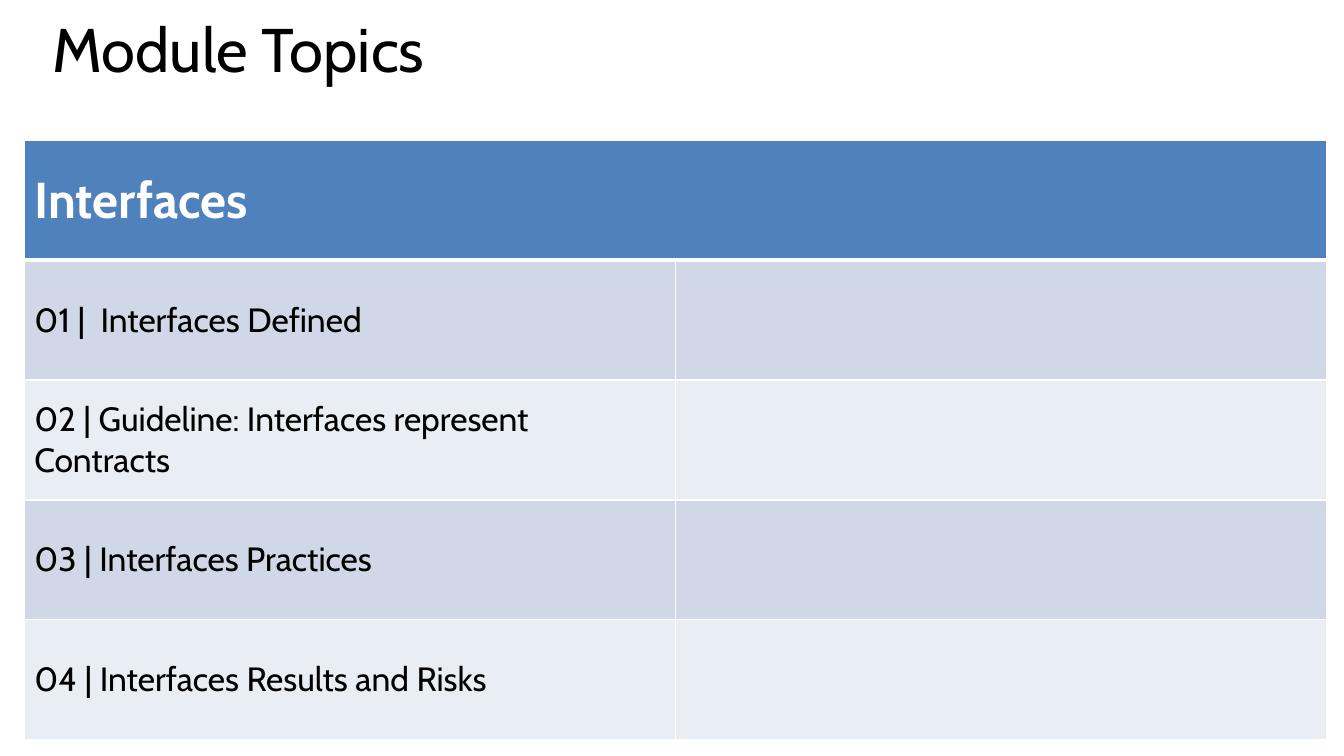
from lxml import etree
from pptx import Presentation
from pptx.dml.color import RGBColor
from pptx.enum import text
from pptx.oxml import ns
from pptx.util import Inches, Pt

TITLE = "Module Topics"
HEADING = "Interfaces"
TOPICS = [
    "01 |  Interfaces Defined",
    "02 | Guideline: Interfaces represent Contracts",
    "03 | Interfaces Practices",
    "04 | Interfaces Results and Risks",
]
FONT = "Cabin"
HEADER_FILL = "4F81BD"
BAND_FILLS = ["D0D8E8", "E9EDF4"]
COLUMNS = 2
ROW_HEIGHT = 1.19


def rgb(value):
    return RGBColor.from_string(value)


def write(tf, content, size, color="000000", bold=False, spacing=None):
    p = tf.paragraphs[0]
    p.alignment = text.PP_ALIGN.LEFT
    if spacing:
        p.line_spacing = spacing
    r = p.add_run()
    r.text = content
    r.font.name = FONT
    r.font.size = Pt(size)
    r.font.bold = bold
    r.font.color.rgb = rgb(color)


def set_borders(cell, color="FFFFFF", **widths):
    tcPr = cell._tc.get_or_add_tcPr()
    for i, side in enumerate("LRTB"):
        ln = etree.Element(ns.qn(f"a:ln{side}"), w=str(Pt(widths.get(side, 1))))
        fill = etree.SubElement(ln, ns.qn("a:solidFill"))
        etree.SubElement(fill, ns.qn("a:srgbClr"), val=color)
        tcPr.insert(i, ln)


def format_cell(cell, fill, **widths):
    cell.vertical_anchor = text.MSO_ANCHOR.MIDDLE
    cell.fill.solid()
    cell.fill.fore_color.rgb = rgb(fill)
    set_borders(cell, **widths)


def add_title(s):
    title = s.shapes.title
    title.left, title.top = Inches(0.42), Inches(0.2)
    title.width, title.height = Inches(12.6), Inches(1.16)
    tf = title.text_frame
    tf.word_wrap = True
    tf.vertical_anchor = text.MSO_ANCHOR.TOP
    write(tf, TITLE, 44, spacing=0.8)


def add_topics(s):
    rows = len(TOPICS) + 1
    table = s.shapes.add_table(
        rows, COLUMNS, Inches(0.24), Inches(1.39),
        Inches(12.92), Inches(ROW_HEIGHT * rows)).table
    for cell in table.rows[0].cells:
        format_cell(cell, HEADER_FILL, B=3)
    heading = table.cell(0, 0)
    heading.merge(table.cell(0, COLUMNS - 1))
    write(heading.text_frame, HEADING, 36, "FFFFFF", bold=True)
    for i, topic in enumerate(TOPICS):
        cells = table.rows[i + 1].cells
        for cell in cells:
            format_cell(cell, BAND_FILLS[i % 2], T=1 if i else 3)
        write(cells[0].text_frame, topic, 24)


def main():
    prs = Presentation()
    prs.slide_width, prs.slide_height = Inches(13.33), Inches(7.5)
    s = prs.slides.add_slide(prs.slide_layouts[5])
    add_title(s)
    add_topics(s)
    prs.save("out.pptx")


if __name__ == "__main__":
    main()
